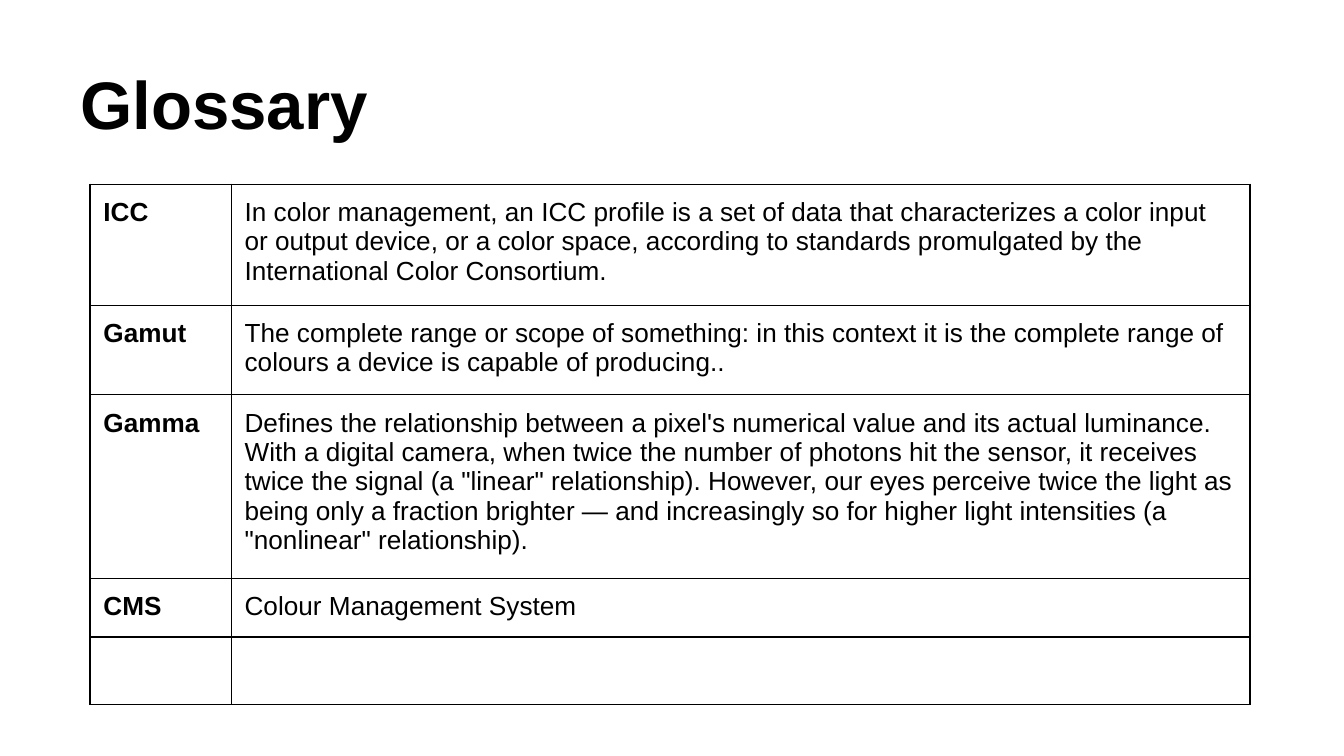
from lxml.etree import SubElement
from pptx import Presentation
from pptx.dml.color import RGBColor
from pptx.enum.text import MSO_ANCHOR
from pptx.oxml.ns import qn
from pptx.util import Inches, Pt

SLIDE_WIDTH = Inches(10)
SLIDE_HEIGHT = SLIDE_WIDTH * 9 // 16
COLORS = {"text": "000000", "border": "000000", "background": "FFFFFF"}
FONT = "Arial"
MARGINS = {f"margin_{side}": Inches(0.1) for side in ("left", "top", "right", "bottom")}
TITLE_FORMAT = {"name": FONT, "size": Pt(36), "bold": True}
TERM_FORMAT = {"name": FONT, "size": Pt(14), "bold": True}
DEFINITION_FORMAT = {**TERM_FORMAT, "bold": False}
COLUMN_WIDTHS = [Inches(width) for width in (1.05, 7.58)]
ROW_HEIGHTS = [Inches(height) for height in (0.86, 0.64, 1.3, 0.42, 0.49)]

GLOSSARY = [
    ("ICC", "In color management, an ICC profile is a set of data that characterizes "
            "a color input or output device, or a color space, according to standards "
            "promulgated by the International Color Consortium."),
    ("Gamut", "The complete range or scope of something: in this context it is the "
              "complete range of colours a device is capable of producing.."),
    ("Gamma", "Defines the relationship between a pixel's numerical value and its actual "
              "luminance. With a digital camera, when twice the number of photons hit the "
              "sensor, it receives twice the signal (a \"linear\" relationship). However, "
              "our eyes perceive twice the light as being only a fraction brighter — and "
              "increasingly so for higher light intensities (a \"nonlinear\" relationship)."),
    ("CMS", "Colour Management System"),
    ("", ""),
]


def set_attributes(target, values):
    for name, value in values.items():
        setattr(target, name, value)


def write(frame, text, font_format):
    run = frame.paragraphs[0].add_run()
    run.text = text
    set_attributes(run.font, font_format)
    run.font.color.rgb = RGBColor.from_string(COLORS["text"])


def add_title(slide, text):
    title = slide.shapes.add_textbox(
        round(SLIDE_WIDTH * 0.05), round(SLIDE_HEIGHT * 0.04),
        round(SLIDE_WIDTH * 0.9), Inches(0.94))
    frame = title.text_frame
    set_attributes(frame, {**MARGINS, "word_wrap": True,
                           "vertical_anchor": MSO_ANCHOR.BOTTOM})
    write(frame, text, TITLE_FORMAT)


def outline_cell(cell):
    properties = cell._tc.get_or_add_tcPr()
    for edge in ("a:lnL", "a:lnR", "a:lnT", "a:lnB"):
        line = SubElement(properties, qn(edge), w=str(Pt(0.75)))
        fill = SubElement(line, qn("a:solidFill"))
        SubElement(fill, qn("a:srgbClr"), val=COLORS["border"])


def fill_cell(cell, text, font_format):
    set_attributes(cell, MARGINS)
    outline_cell(cell)
    cell.fill.background()
    if text:
        write(cell.text_frame, text, font_format)


def add_glossary(slide, entries):
    table = slide.shapes.add_table(
        len(entries), len(COLUMN_WIDTHS), Inches(0.67), Inches(1.37),
        sum(COLUMN_WIDTHS), sum(ROW_HEIGHTS)).table
    set_attributes(table, {"first_row": False, "horz_banding": False})
    for column, width in zip(table.columns, COLUMN_WIDTHS):
        column.width = width
    for row, height, entry in zip(table.rows, ROW_HEIGHTS, entries):
        row.height = height
        for cell, text, font_format in zip(row.cells, entry, (TERM_FORMAT, DEFINITION_FORMAT)):
            fill_cell(cell, text, font_format)


def main():
    presentation = Presentation()
    set_attributes(presentation, {"slide_width": SLIDE_WIDTH, "slide_height": SLIDE_HEIGHT})
    slide = presentation.slides.add_slide(presentation.slide_layouts[6])
    slide.background.fill.solid()
    slide.background.fill.fore_color.rgb = RGBColor.from_string(COLORS["background"])
    add_title(slide, "Glossary")
    add_glossary(slide, GLOSSARY)
    presentation.save("out.pptx")


if __name__ == "__main__":
    main()
